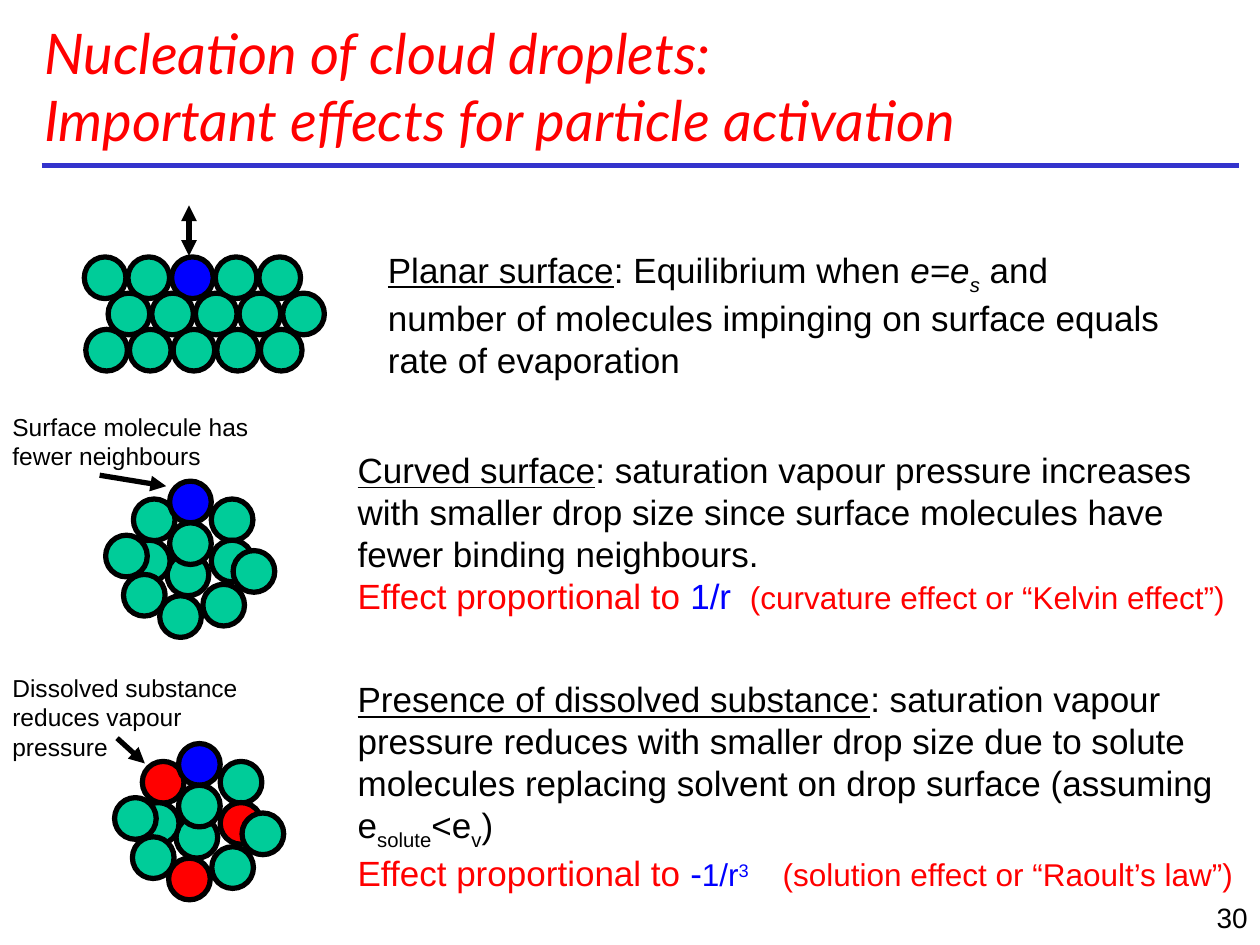
from dataclasses import dataclass

from lxml.etree import SubElement
from pptx import Presentation
from pptx.dml.color import RGBColor
from pptx.enum.shapes import MSO_CONNECTOR, MSO_SHAPE
from pptx.enum.text import MSO_ANCHOR, PP_ALIGN
from pptx.oxml.ns import qn
from pptx.util import Cm, Pt


@dataclass(frozen=True)
class Theme:
    black: RGBColor = RGBColor.from_string("000000")
    red: RGBColor = RGBColor.from_string("FF0000")
    blue: RGBColor = RGBColor.from_string("0000FF")
    green: RGBColor = RGBColor.from_string("00CC99")
    rule: RGBColor = RGBColor.from_string("3333CC")
    title_font: str = "Lato"
    body_font: str = "Arial"
    title_size: Pt = Pt(32)
    body_size: Pt = Pt(20)
    remark_size: Pt = Pt(18)
    number_size: Pt = Pt(16)
    label_size: Pt = Pt(14)
    stroke: Pt = Pt(3)


theme = Theme()


def add_text(shapes, box, paragraphs, size, tab=None):
    """Add a text box; each paragraph is a list of (text, run style) pairs."""
    shape = shapes.add_textbox(*(Cm(length) for length in box))
    frame = shape.text_frame
    frame.word_wrap = True
    for index, runs in enumerate(paragraphs):
        paragraph = frame.paragraphs[0] if index == 0 else frame.add_paragraph()
        if tab and any("\t" in text for text, style in runs):
            tabs = SubElement(paragraph._p.get_or_add_pPr(), qn("a:tabLst"))
            SubElement(tabs, qn("a:tab"), pos=str(Cm(tab)), algn="l")
        paragraph.font.name = theme.body_font
        paragraph.font.size = size
        paragraph.font.color.rgb = theme.black
        for text, style in runs:
            run = paragraph.add_run()
            run.text = text
            if "color" in style:
                run.font.color.rgb = style["color"]
            if "size" in style:
                run.font.size = style["size"]
            if "underline" in style:
                run.font.underline = True
            if "italic" in style:
                run.font.italic = True
            if "baseline" in style:
                run._r.get_or_add_rPr().set("baseline", str(style["baseline"] * 1000))
    return shape


def add_line(shapes, ends, color, arrowheads=()):
    line = shapes.add_connector(MSO_CONNECTOR.STRAIGHT, *(Cm(length) for length in ends))
    line.line.color.rgb = color
    line.line.width = theme.stroke
    for arrowhead in arrowheads:
        SubElement(line.line._get_or_add_ln(), qn(f"a:{arrowhead}"), type="triangle")
    SubElement(line._element.spPr, qn("a:effectLst"))


presentation = Presentation()
presentation.slide_width = Cm(25.4)
presentation.slide_height = Cm(19.05)
slide = presentation.slides.add_slide(presentation.slide_layouts[6])

# Heading and slide number
add_line(slide.shapes, (0.84, 3.33, 24.97, 3.33), theme.rule)
title = add_text(
    slide.shapes, (0.64, 0.56, 20.32, 2.34),
    [[("Nucleation of cloud droplets:", {})]], theme.title_size,
)
title.text_frame.vertical_anchor = MSO_ANCHOR.MIDDLE
heading = title.text_frame.paragraphs[0]
heading.add_line_break()
heading.add_run().text = "Important effects for particle activation"
heading.font.name = theme.title_font
heading.font.italic = True
heading.font.color.rgb = theme.red
number = add_text(slide.shapes, (20.12, 18.03, 5.28, 1.27), [[("30", {})]], theme.number_size)
number.text_frame.paragraphs[0].alignment = PP_ALIGN.RIGHT

# Molecules: (shapes, left, top, color), from back to front
diameter = 0.84
molecules = []
for row, row_left in enumerate((1.7, 2.18, 1.73)):
    for column in range(5):
        color = theme.blue if (row, column) == (0, 2) else theme.green
        molecules.append((slide.shapes, row_left + 0.88 * column, 5.18 + 0.73 * row, color))

droplet_offsets = (
    (1.24, 1.47), (0.56, 0.36), (1.29, 0), (2.13, 0.36), (0.46, 1.19), (2.13, 1.19),
    (1.29, 0.84), (1.09, 2.31), (0.36, 1.88), (1.96, 2.08), (0, 1.09), (2.57, 1.4),
)
surface_molecule = 2
droplets = (
    # left, top, solute molecules
    (2.13, 9.7, ()),
    (2.31, 14.99, (1, 5, 7)),
)
for droplet_left, droplet_top, solutes in droplets:
    group = slide.shapes.add_group_shape()
    for index, (dx, dy) in enumerate(droplet_offsets):
        color = theme.green
        if index == surface_molecule:
            color = theme.blue
        elif index in solutes:
            color = theme.red
        molecules.append((group.shapes, droplet_left + dx, droplet_top + dy, color))

for shapes, left, top, color in molecules:
    molecule = shapes.add_shape(
        MSO_SHAPE.OVAL, Cm(left), Cm(top), Cm(diameter), Cm(diameter)
    )
    molecule.shadow.inherit = False
    molecule.fill.solid()
    molecule.fill.fore_color.rgb = color
    molecule.line.color.rgb = theme.black
    molecule.line.width = theme.stroke

# Explanations
underlined = {"underline": True}
subscript = {"baseline": -25}
red = {"color": theme.red}
blue = {"color": theme.blue}
red_remark = {"color": theme.red, "size": theme.remark_size}
blue_remark = {"color": theme.blue, "size": theme.remark_size}
explanations = (
    # box, tab position, paragraphs
    ((7.57, 4.88, 16.15, 2.79), None, [[
        ("Planar surface", underlined),
        (": Equilibrium when ", {}),
        ("e=e", {"italic": True}),
        ("s", {"italic": True, "baseline": -25}),
        (" and number of molecules impinging on surface equals rate of evaporation", {}),
    ]]),
    ((6.96, 8.92, 18.24, 3.68), 7.91, [
        [
            ("Curved surface", underlined),
            (": saturation vapour pressure increases with smaller drop size since "
             "surface molecules have fewer binding neighbours.", {}),
        ],
        [
            ("Effect proportional to ", red),
            ("1/r", blue),
            ("\t(curvature effect or “Kelvin effect”)", red_remark),
        ],
    ]),
    ((6.96, 13.54, 18.21, 4.52), 8.57, [
        [
            ("Presence of dissolved substance", underlined),
            (": saturation vapour pressure reduces with smaller drop size due to solute "
             "molecules replacing solvent on drop surface (assuming e", {}),
            ("solute", subscript),
            ("<e", {}),
            ("v", subscript),
            (")", {}),
        ],
        [
            ("Effect proportional to ", red),
            ("-", blue),
            ("1/r", blue_remark),
            ("3", {**blue_remark, "baseline": 30}),
            ("\t(solution effect or “Raoult’s law”)", red_remark),
        ],
    ]),
)
for box, tab, paragraphs in explanations:
    add_text(slide.shapes, box, paragraphs, theme.body_size, tab)

# Labels and arrows
labels = (
    ((0, 8.18, 5.44, 1.45), "Surface molecule has fewer neighbours"),
    ((0, 13.44, 5.44, 2.03), "Dissolved substance reduces vapour pressure"),
)
for box, text in labels:
    add_text(slide.shapes, box, [[(text, {})]], theme.label_size)

arrows = (
    ((3.81, 4.14, 3.81, 5.16), ("headEnd", "tailEnd")),
    ((2.01, 9.58, 3.35, 9.8), ("tailEnd",)),
    ((2.36, 14.88, 2.92, 15.39), ("tailEnd",)),
)
for ends, arrowheads in arrows:
    add_line(slide.shapes, ends, theme.black, arrowheads)

presentation.save("out.pptx")
